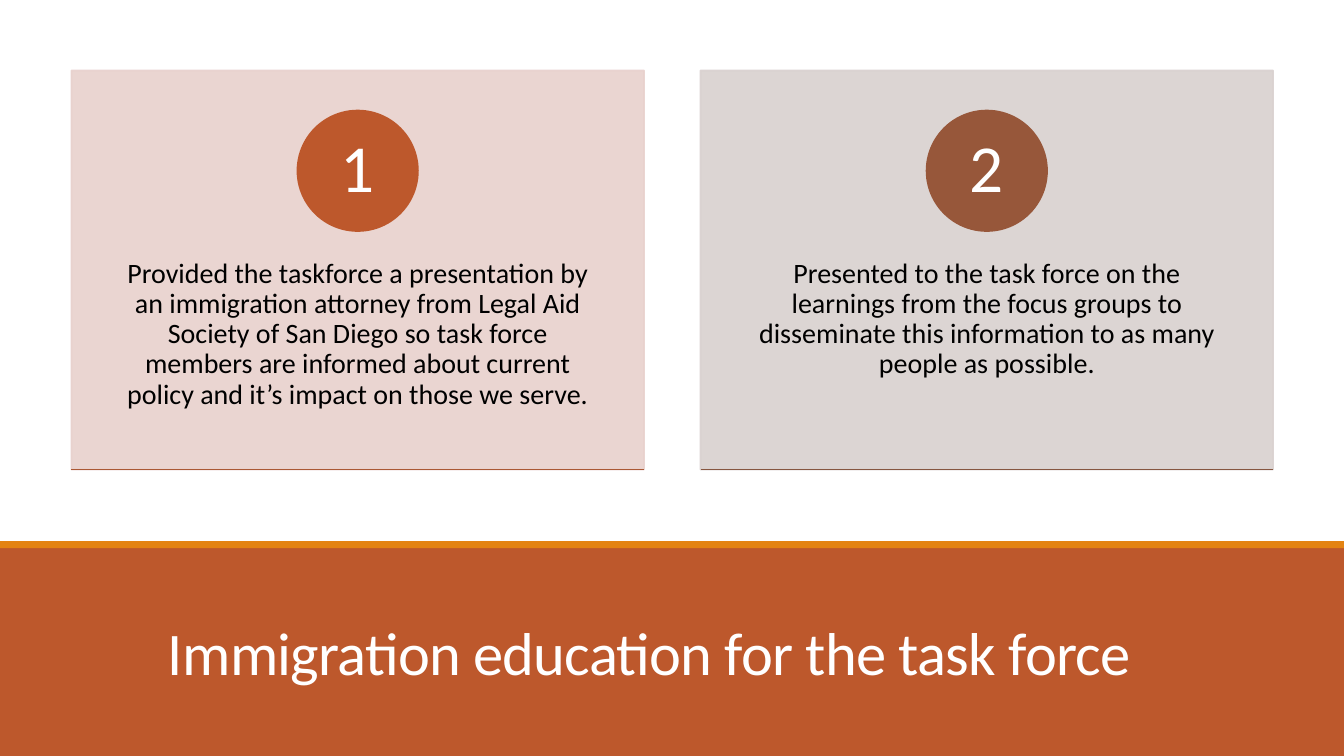
from dataclasses import dataclass

from lxml.etree import SubElement
from pptx import Presentation
from pptx.dml.color import RGBColor
from pptx.dml.fill import FillFormat
from pptx.enum.shapes import MSO_CONNECTOR, MSO_SHAPE
from pptx.enum.text import MSO_ANCHOR, PP_ALIGN
from pptx.oxml.ns import qn
from pptx.shapes.autoshape import Shape
from pptx.slide import Slide
from pptx.util import Pt

SLIDE_WIDTH, SLIDE_HEIGHT = 960, 540
CARD_LEFT, CARD_TOP, CARD_WIDTH, CARD_HEIGHT = 51, 50.4, 409, 285
CARD_STEP = 449.4
BADGE_TOP, BADGE_SIZE = 79, 86
BODY_TOP, BODY_HEIGHT = 159, 171
LINE_WIDTH = 1.25
WHITE, RUST, ORANGE = "FFFFFF", "BD582C", "E48312"


@dataclass
class Card:
    number: str
    text: str
    background: str
    badge: str
    rule: str


CARDS = [
    Card(
        "1",
        "Provided the taskforce a presentation by an immigration attorney from "
        "Legal Aid Society of San Diego so task force members are informed about "
        "current policy and it’s impact on those we serve.",
        "E8D1CD", RUST, "AA5834",
    ),
    Card(
        "2",
        "Presented to the task force on the learnings from the focus groups to "
        "disseminate this information to as many people as possible.",
        "D9D1CF", "97573A", "865640",
    ),
]


def color(value: str) -> RGBColor:
    return RGBColor.from_string(value)


def paint(fill: FillFormat, value: str) -> None:
    fill.solid()
    fill.fore_color.rgb = color(value)


def add_filled(slide: Slide, kind: MSO_SHAPE, left: float, top: float, width: float,
               height: float, fill: str, outlined: bool = False) -> Shape:
    shape = slide.shapes.add_shape(kind, Pt(left), Pt(top), Pt(width), Pt(height))
    shape.shadow.inherit = False
    paint(shape.fill, fill)
    if outlined:
        paint(shape.line.fill, fill)
        shape.line.width = Pt(LINE_WIDTH)
    else:
        shape.line.fill.background()
    return shape


def set_opacity(shape: Shape, percent: int) -> None:
    """Apply one opacity to the fill and the outline."""
    for rgb in shape._element.spPr.iter(qn("a:srgbClr")):
        SubElement(rgb, qn("a:alpha")).set("val", str(percent * 1000))


def write(shape: Shape, text: str, size: float, value: str, line_spacing: float,
          anchor: MSO_ANCHOR, inset_x: float, inset_y: float) -> None:
    """Put one centred Calibri paragraph in the shape."""
    frame = shape.text_frame
    frame.text = text
    frame.word_wrap = True
    frame.vertical_anchor = anchor
    frame.margin_left = frame.margin_right = Pt(inset_x)
    frame.margin_top = frame.margin_bottom = Pt(inset_y)
    paragraph = frame.paragraphs[0]
    paragraph.alignment = PP_ALIGN.CENTER
    paragraph.line_spacing = line_spacing
    font = paragraph.runs[0].font
    font.name = "Calibri"
    font.size = Pt(size)
    font.color.rgb = color(value)


def add_rule(slide: Slide, left: float, top: float, width: float, value: str) -> None:
    rule = slide.shapes.add_connector(
        MSO_CONNECTOR.STRAIGHT, Pt(left), Pt(top), Pt(left + width), Pt(top))
    paint(rule.line.fill, value)
    rule.line.width = Pt(LINE_WIDTH)
    SubElement(rule._element.spPr, qn("a:effectLst"))


def add_card(slide: Slide, card: Card, left: float) -> None:
    panel = add_filled(slide, MSO_SHAPE.RECTANGLE, left, CARD_TOP, CARD_WIDTH,
                       CARD_HEIGHT, card.background, outlined=True)
    set_opacity(panel, 90)
    body = slide.shapes.add_textbox(
        Pt(left), Pt(BODY_TOP), Pt(CARD_WIDTH), Pt(BODY_HEIGHT))
    write(body, card.text, 20, "000000", 0.9, MSO_ANCHOR.TOP, 32, 26)
    badge = add_filled(slide, MSO_SHAPE.OVAL, left + (CARD_WIDTH - BADGE_SIZE) / 2,
                       BADGE_TOP, BADGE_SIZE, BADGE_SIZE, card.badge, outlined=True)
    write(badge, card.number, 48, WHITE, 0.9, MSO_ANCHOR.MIDDLE, 6.5, 1)
    add_rule(slide, left, CARD_TOP + CARD_HEIGHT, CARD_WIDTH, card.rule)


def add_title_band(slide: Slide) -> None:
    add_filled(slide, MSO_SHAPE.RECTANGLE, 0, 390, SLIDE_WIDTH, SLIDE_HEIGHT - 390, RUST)
    add_filled(slide, MSO_SHAPE.RECTANGLE, 0, 386.5, SLIDE_WIDTH, 5, ORANGE)
    title = slide.shapes.add_textbox(Pt(84), Pt(413.3), Pt(792), Pt(81.4))
    write(title, "Immigration education for the task force\t", 43.2, WHITE, 0.85,
          MSO_ANCHOR.BOTTOM, 7.2, 3.6)
    run = title.text_frame.paragraphs[0].runs[0]
    run.font._element.set("spc", "-50")


def main() -> None:
    presentation = Presentation()
    presentation.slide_width = Pt(SLIDE_WIDTH)
    presentation.slide_height = Pt(SLIDE_HEIGHT)
    slide = presentation.slides.add_slide(presentation.slide_layouts[6])
    paint(slide.background.fill, WHITE)
    add_title_band(slide)
    for index, card in enumerate(CARDS):
        add_card(slide, card, CARD_LEFT + index * CARD_STEP)
    presentation.save("out.pptx")


if __name__ == "__main__":
    main()
